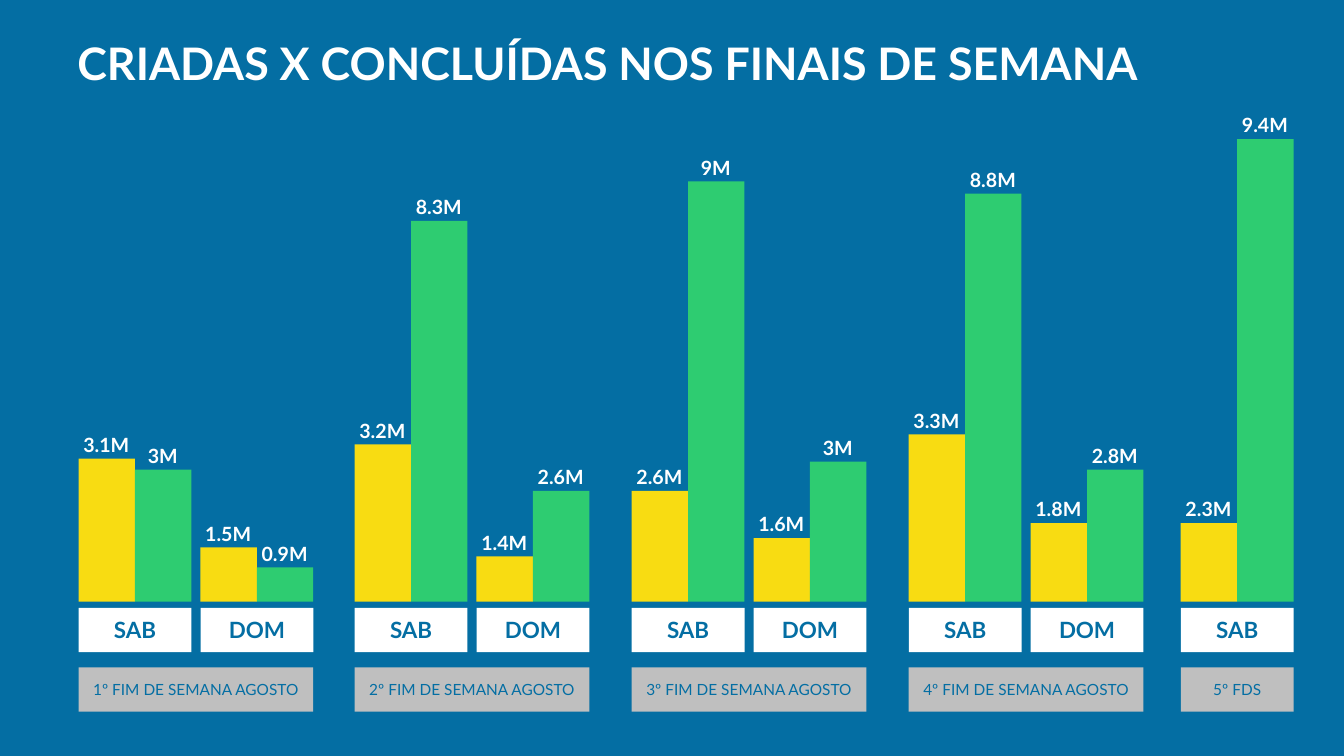
from pptx import Presentation
from pptx.dml.color import RGBColor
from pptx.enum.shapes import MSO_SHAPE
from pptx.enum.text import MSO_ANCHOR, PP_ALIGN
from pptx.util import Pt

BLUE = RGBColor(0x04, 0x6E, 0xA3)
WHITE = RGBColor(0xFF, 0xFF, 0xFF)
GREY = RGBColor(0xBF, 0xBF, 0xBF)
YELLOW = RGBColor(0xF8, 0xDC, 0x12)
GREEN = RGBColor(0x2E, 0xCC, 0x71)

TITLE = "CRIADAS X CONCLUÍDAS NOS FINAIS DE SEMANA"
# Weekend label, left edge, days: (name, created, completed), each bar as (label, height)
WEEKENDS = [
    ("1º FIM DE SEMANA AGOSTO", 78, [("SAB", ("3.1M", 142), ("3M", 131)),
                                     ("DOM", ("1.5M", 54), ("0.9M", 34))]),
    ("2º FIM DE SEMANA AGOSTO", 352, [("SAB", ("3.2M", 156), ("8.3M", 378)),
                                      ("DOM", ("1.4M", 45), ("2.6M", 110))]),
    ("3º FIM DE SEMANA AGOSTO", 627, [("SAB", ("2.6M", 110), ("9M", 417)),
                                      ("DOM", ("1.6M", 63), ("3M", 139))]),
    ("4º FIM DE SEMANA AGOSTO", 902, [("SAB", ("3.3M", 166), ("8.8M", 405)),
                                      ("DOM", ("1.8M", 78), ("2.8M", 131))]),
    ("5º FDS", 1172, [("SAB", ("2.3M", 78), ("9.4M", 459))]),
]

PX = 9144  # EMU per px, 100 px to the inch
SLIDE_WIDTH, SLIDE_HEIGHT = 1334, 750
BAR_WIDTH = 56
DAY_WIDTH = 2 * BAR_WIDTH
DAY_STEP = 121
BASELINE = 597
DAY_TOP, WEEKEND_TOP, BOX_HEIGHT = 603, 662, 44
VALUE_WIDTH, VALUE_HEIGHT, VALUE_RISE = 75, 34, 31


def write(shape, text, *, size, color, bold=False, align=PP_ALIGN.CENTER,
          anchor=MSO_ANCHOR.MIDDLE, inset=(0, 0), spacing=None):
    frame = shape.text_frame
    frame.word_wrap = True
    frame.vertical_anchor = anchor
    frame.margin_left = frame.margin_right = inset[0] * PX
    frame.margin_top = frame.margin_bottom = inset[1] * PX
    paragraph = frame.paragraphs[0]
    paragraph.alignment = align
    paragraph.line_spacing = spacing
    run = paragraph.add_run()
    run.text = text
    run.font.name = "Lato"
    run.font.size = Pt(size)
    run.font.bold = bold
    run.font.color.rgb = color


def add_box(slide, left, top, width, height, fill):
    shape = slide.shapes.add_shape(MSO_SHAPE.RECTANGLE, left * PX, top * PX,
                                   width * PX, height * PX)
    shape.shadow.inherit = False
    shape.fill.solid()
    shape.fill.fore_color.rgb = fill
    shape.line.fill.background()
    return shape


def add_text_box(slide, left, top, width, height):
    return slide.shapes.add_textbox(left * PX, top * PX, width * PX, height * PX)


def add_bar(slide, left, value, height, fill):
    """Draw one bar on the baseline with its value above it."""
    top = BASELINE - height
    add_box(slide, left, top, BAR_WIDTH, height, fill)
    value_left = left + (BAR_WIDTH - VALUE_WIDTH) // 2
    value_box = add_text_box(slide, value_left, top - VALUE_RISE, VALUE_WIDTH, VALUE_HEIGHT)
    write(value_box, value, size=14, color=WHITE, bold=True, inset=(0, 5))


def add_weekend(slide, label, left, days):
    width = (len(days) - 1) * DAY_STEP + DAY_WIDTH
    weekend_box = add_box(slide, left, WEEKEND_TOP, width, BOX_HEIGHT, GREY)
    write(weekend_box, label, size=11, color=BLUE)
    for index, (name, created, completed) in enumerate(days):
        day_left = left + index * DAY_STEP
        day_box = add_box(slide, day_left, DAY_TOP, DAY_WIDTH, BOX_HEIGHT, WHITE)
        write(day_box, name, size=16, color=BLUE, bold=True)
        add_bar(slide, day_left, *created, YELLOW)
        add_bar(slide, day_left + BAR_WIDTH, *completed, GREEN)


def main():
    presentation = Presentation()
    presentation.slide_width = SLIDE_WIDTH * PX
    presentation.slide_height = SLIDE_HEIGHT * PX
    slide = presentation.slides.add_slide(presentation.slide_layouts[6])
    slide.background.fill.solid()
    slide.background.fill.fore_color.rgb = BLUE

    title = add_text_box(slide, 67, 37, 1200, 125)
    write(title, TITLE, size=32, color=WHITE, bold=True, align=PP_ALIGN.LEFT,
          anchor=MSO_ANCHOR.TOP, inset=(10, 5), spacing=0.9)
    for label, left, days in WEEKENDS:
        add_weekend(slide, label, left, days)
    presentation.save("out.pptx")


if __name__ == "__main__":
    main()
